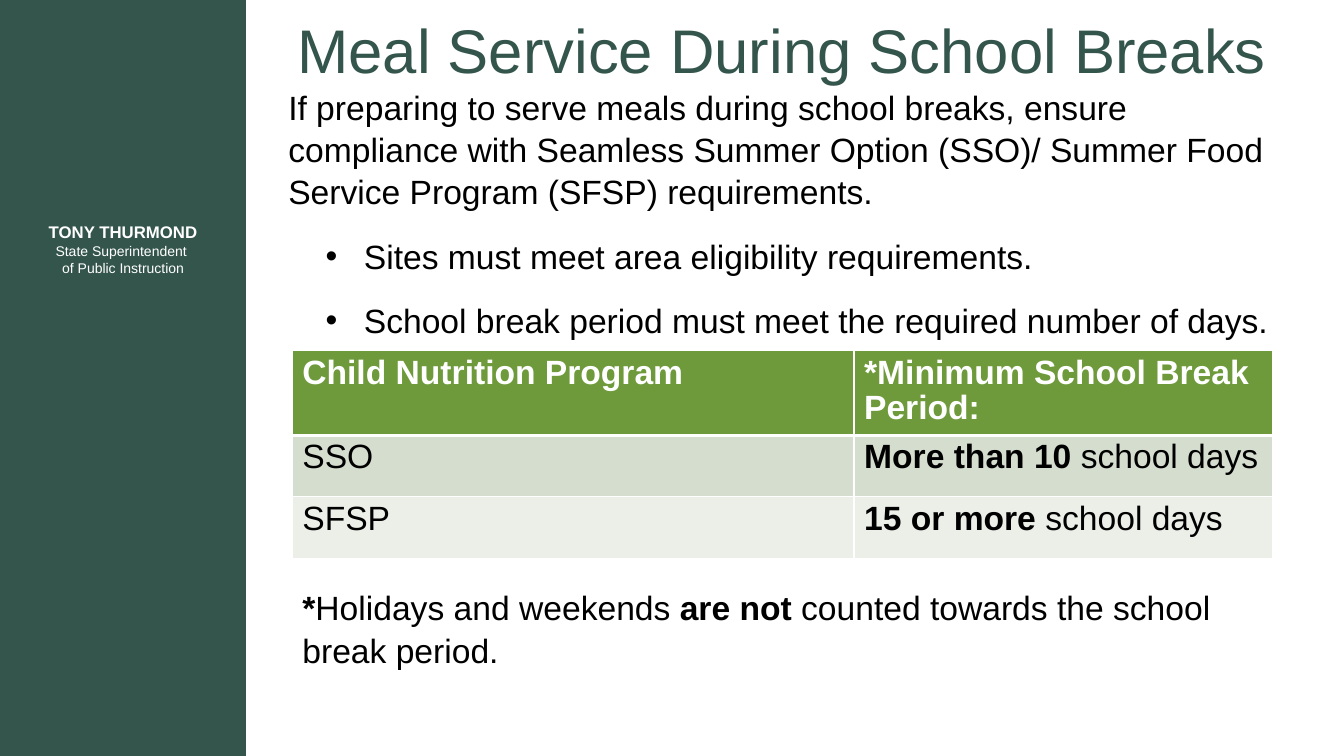
from pptx import Presentation
from pptx.dml.color import RGBColor
from pptx.enum.shapes import MSO_SHAPE
from pptx.enum.text import MSO_ANCHOR, MSO_AUTO_SIZE, PP_ALIGN
from pptx.oxml.ns import qn
from pptx.util import Inches, Pt
from lxml import etree

RECT = MSO_SHAPE.RECTANGLE
TOP, MIDDLE = MSO_ANCHOR.TOP, MSO_ANCHOR.MIDDLE
LEFT, CENTER = PP_ALIGN.LEFT, PP_ALIGN.CENTER
NO_FIT = MSO_AUTO_SIZE.NONE

# Content: a paragraph is a list of (text, bold) runs
TITLE = [("Meal Service During School Breaks", False)]
INTRO = [("If preparing to serve meals during school breaks, ensure compliance with "
          "Seamless Summer Option (SSO)/ Summer Food Service Program (SFSP) "
          "requirements.", False)]
BULLETS = [
    [("Sites must meet area eligibility requirements.", False)],
    [("School break period must meet the required number of days.", False)],
]
TABLE = [
    [[("Child Nutrition Program", True)], [("*Minimum School Break Period:", True)]],
    [[("SSO", False)], [("More than 10", True), (" school days", False)]],
    [[("SFSP", False)], [("15 or more", True), (" school days", False)]],
]
NOTE = [("*", True), ("Holidays and weekends ", False), ("are not", True),
        (" counted towards the school break period.", False)]
NAME = [("TONY THURMOND", True)]
ROLES = ["State Superintendent ", "of Public Instruction"]

COLORS = {"white": "FFFFFF", "pine": "34554C", "ink": "000000",
          "head": "6E9A3B", "odd": "D5DECE", "even": "EBEFE8"}

# Layout: left, top, width, height as percent of the slide
WIDE, HIGH = Inches(13.33), Inches(7.5)
AREAS = {
    "side": (0, 0, 18.3, 100),
    "name": (2.18, 27.87, 13.95, 10.13),
    "title": (20.7, -1.87, 75, 16.67),
    "body": (20.7, 10.67, 75.1, 19.87),
    "table": (21.75, 46.4, 72.92, 27.47),
    "note": (21.75, 76.53, 75.1, 16.67),
}
COLS = (41.8, 31.12)
ROWS = (11.2, 8.13, 8.13)

# Paragraph formats
BODY = {"line_spacing": 1.04, "space_before": Pt(8), "space_after": Pt(8)}
FLUSH = {"line_spacing": 1.07, "space_before": Pt(0), "space_after": Pt(0)}
CELL = {"line_spacing": 0.95}
MID = {"alignment": CENTER}


def color(name):
    return RGBColor.from_string(COLORS[name])


def area(key):
    x, y, w, h = AREAS[key]
    return [int(v * side / 100) for v, side in
            ((x, WIDE), (y, HIGH), (w, WIDE), (h, HIGH))]


def place(shape, key):
    shape.left, shape.top, shape.width, shape.height = area(key)


def frame(shape, anchor):
    box = shape.text_frame
    form = {"word_wrap": True, "auto_size": NO_FIT, "vertical_anchor": anchor}
    for key, value in form.items():
        setattr(box, key, value)
    return box


def write(para, runs, size, ink, form, bullet=None):
    """Fill a paragraph; bullet is None (leave), False (none) or a character."""
    if bullet is not None:
        props = para._p.get_or_add_pPr()
        props.set("marL", str(Inches(0.75) if bullet else 0))
        props.set("indent", str(Inches(-0.38) if bullet else 0))
        mark = etree.SubElement(props, qn("a:buChar" if bullet else "a:buNone"))
        if bullet:
            mark.set("char", bullet)
    for key, value in form.items():
        setattr(para, key, value)
    for text, bold in runs:
        run = para.add_run()
        run.text = text
        font = run.font
        font.color.rgb = color(ink)
        for key, value in {"name": "Arial", "size": Pt(size), "bold": bold}.items():
            setattr(font, key, value)


def border(cell, bottom):
    props = cell._tc.get_or_add_tcPr()
    for i, side in enumerate(("lnL", "lnR", "lnT", "lnB")):
        width = bottom if side == "lnB" else 1
        line = etree.Element(qn("a:" + side), w=str(Pt(width)))
        fill = etree.SubElement(line, qn("a:solidFill"))
        etree.SubElement(fill, qn("a:srgbClr"), val=COLORS["white"])
        props.insert(i, line)


deck = Presentation()
deck.slide_width, deck.slide_height = WIDE, HIGH
slide = deck.slides.add_slide(deck.slide_layouts[3])
shapes = slide.shapes
slide.background.fill.solid()
slide.background.fill.fore_color.rgb = color("white")

# Side band and its caption
band = shapes.add_shape(RECT, *area("side"))
band.shadow.inherit = False
band.fill.solid()
band.fill.fore_color.rgb = color("pine")
band.line.fill.background()

label = frame(shapes.add_textbox(*area("name")), MIDDLE).paragraphs[0]
write(label, NAME, 12, "white", MID)
for role in ROLES:
    label.add_line_break()
    write(label, [(role, False)], 10, "white", MID)

# Title, list and footnote
title, body, note = slide.placeholders
for holder, key in ((title, "title"), (body, "body"), (note, "note")):
    place(holder, key)
write(frame(title, MIDDLE).paragraphs[0], TITLE, 44, "pine", MID)

box = frame(body, TOP)
write(box.paragraphs[0], INTRO, 24, "ink", {**BODY, "space_before": Pt(0)}, False)
for item in BULLETS:
    write(box.add_paragraph(), item, 24, "ink", BODY, "•")
write(frame(note, TOP).paragraphs[0], NOTE, 24, "ink", FLUSH, False)

# Table
grid = shapes.add_table(len(ROWS), len(COLS), *area("table")).table
for col, share in zip(grid.columns, COLS):
    col.width = int(WIDE * share / 100)
for row, share in zip(grid.rows, ROWS):
    row.height = int(HIGH * share / 100)
for r, line in enumerate(TABLE):
    for c, runs in enumerate(line):
        cell = grid.cell(r, c)
        cell.fill.solid()
        cell.fill.fore_color.rgb = color(("head", "odd", "even")[r])
        border(cell, 1 if r else 3)
        ink = "ink" if r else "white"
        write(cell.text_frame.paragraphs[0], runs, 24, ink, {**CELL, "alignment": LEFT})

deck.save("out.pptx")
